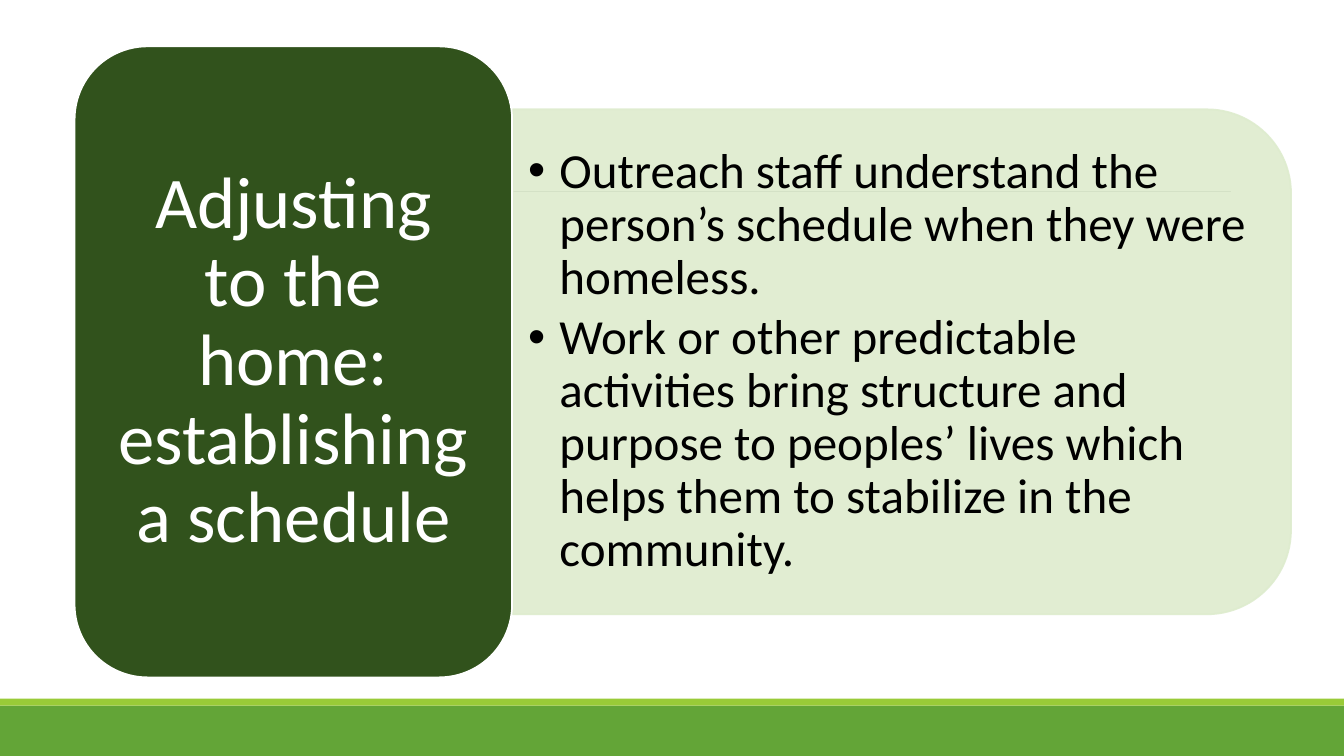
from pptx import Presentation
from pptx.dml.color import RGBColor
from pptx.enum.shapes import MSO_CONNECTOR as Link, MSO_SHAPE as Form
from pptx.enum.text import MSO_ANCHOR as Anchor, PP_ALIGN as Align
from pptx.oxml.ns import qn
from pptx.util import Inches, Pt
from lxml import etree

deck = Presentation()
deck.slide_width, deck.slide_height = Inches(13.33), Inches(7.5)
slide = deck.slides.add_slide(deck.slide_layouts[6])
shapes = slide.shapes

# One column and one row are a hundredth of the slide
col, row = deck.slide_width / 100, deck.slide_height / 100


def paint(fmt, color):
    fmt.solid()
    fmt.fore_color.rgb = RGBColor.from_string(color)


def block(form, x, y, wide, high, color, edge=None):
    item = shapes.add_shape(form, int(x * col), int(y * row),
                            int(wide * col), int(high * row))
    item.shadow.inherit = False
    paint(item.fill, color)
    if edge:
        paint(item.line.fill, edge)
        item.line.width = Pt(1.25)
    else:
        item.line.fill.background()
    return item


# Footer bands
block(Form.RECTANGLE, 0, 93.33, 100, 6.67, "63A537")
block(Form.RECTANGLE, 0, 92.4, 100, 0.93, "99CB38")

# Thin rule behind the panel
rule = shapes.add_connector(Link.STRAIGHT, int(9.83 * col), int(25.33 * row),
                            int(91.6 * col), int(25.33 * row))
paint(rule.line.fill, "808080")
rule.line.width = Pt(0.5)
etree.SubElement(rule._element.spPr, qn("a:effectLst"))

# Pale panel, turned so that its round corners face right
panel = block(Form.ROUND_2_SAME_RECTANGLE, 48.31, -3.6, 37.58, 102.93,
              "DEECCE", "DEECCE")
panel.rotation = 90
for tint in panel._element.spPr.iter(qn("a:srgbClr")):
    etree.SubElement(tint, qn("a:alpha"), val="90000")

# Bullet points
points = [
    "Outreach staff understand the person’s schedule when they were homeless.",
    "Work or other predictable activities bring structure and purpose to "
    "peoples’ lives which helps them to stabilize in the community.",
]
box = shapes.add_textbox(int(38.18 * col), int(17.73 * row),
                         int(56.11 * col), int(60.27 * row))
frame = box.text_frame
frame.word_wrap = True
frame.vertical_anchor = Anchor.MIDDLE
frame.margin_left = frame.margin_right = Inches(0.15)
frame.margin_top = frame.margin_bottom = Inches(0.07)
for i, point in enumerate(points):
    para = frame.add_paragraph() if i else frame.paragraphs[0]
    para.text = point
    para.line_spacing = 0.9
    para.space_after = Pt(5.25)
    props = para._p.get_or_add_pPr()
    props.set("marL", str(Inches(0.31)))
    props.set("indent", str(-Inches(0.31)))
    etree.SubElement(props, qn("a:buFont"), typeface="Arial")
    etree.SubElement(props, qn("a:buChar"), char="•")
    para.font.name, para.font.size = "Calibri", Pt(35)
    paint(para.font.fill, "000000")

# Title card
card = block(Form.ROUNDED_RECTANGLE, 5.55, 6.13, 32.55, 83.47,
             "31521C", "FFFFFF")
frame = card.text_frame
frame.word_wrap = True
frame.vertical_anchor = Anchor.MIDDLE
frame.margin_left = frame.margin_right = Inches(0.22)
frame.margin_top = frame.margin_bottom = Inches(0.11)
title = frame.paragraphs[0]
title.text = "Adjusting to the home: establishing a schedule"
title.alignment = Align.CENTER
title.line_spacing = 0.9
title.font.name, title.font.size = "Calibri", Pt(52)
paint(title.font.fill, "FFFFFF")

deck.save("out.pptx")
